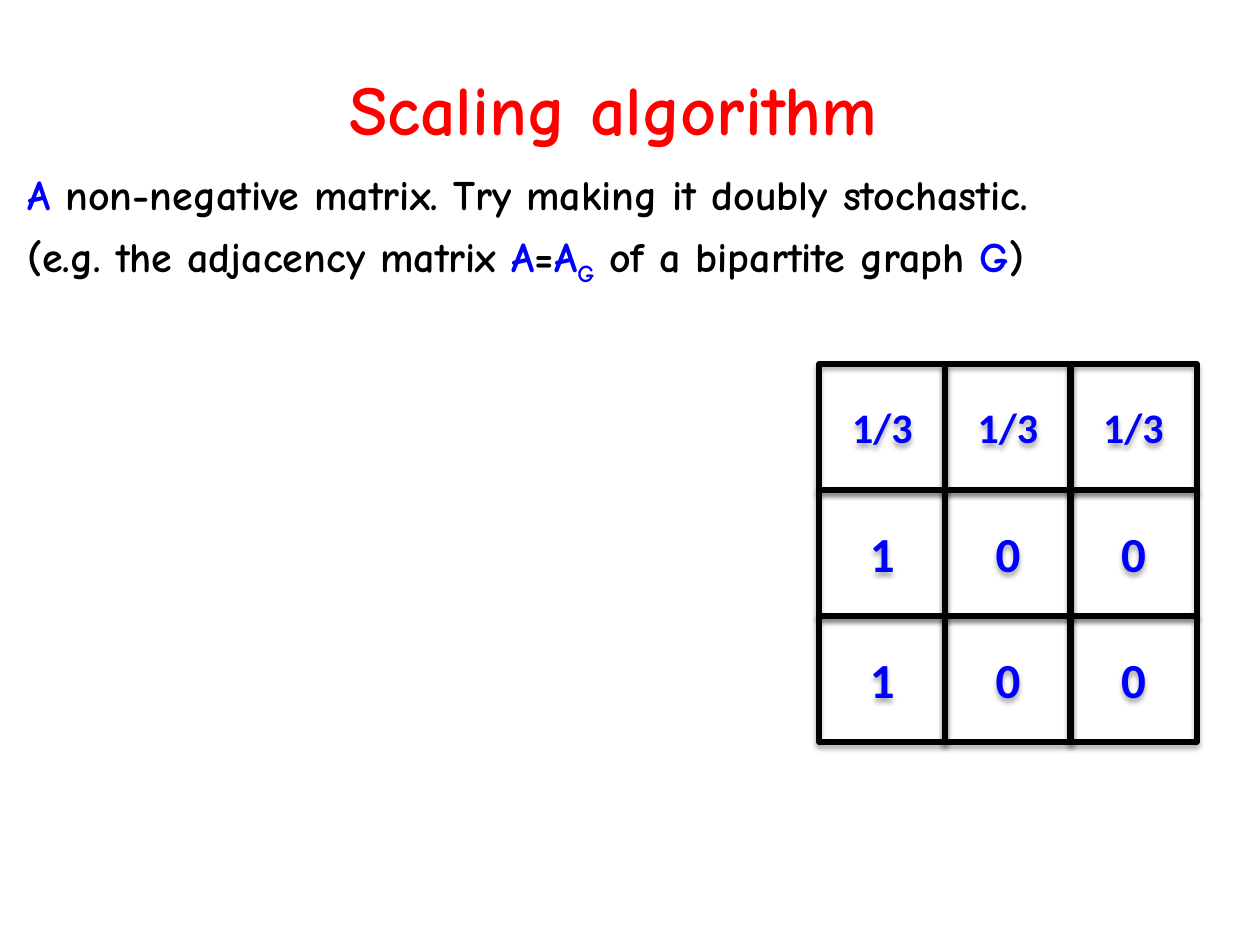
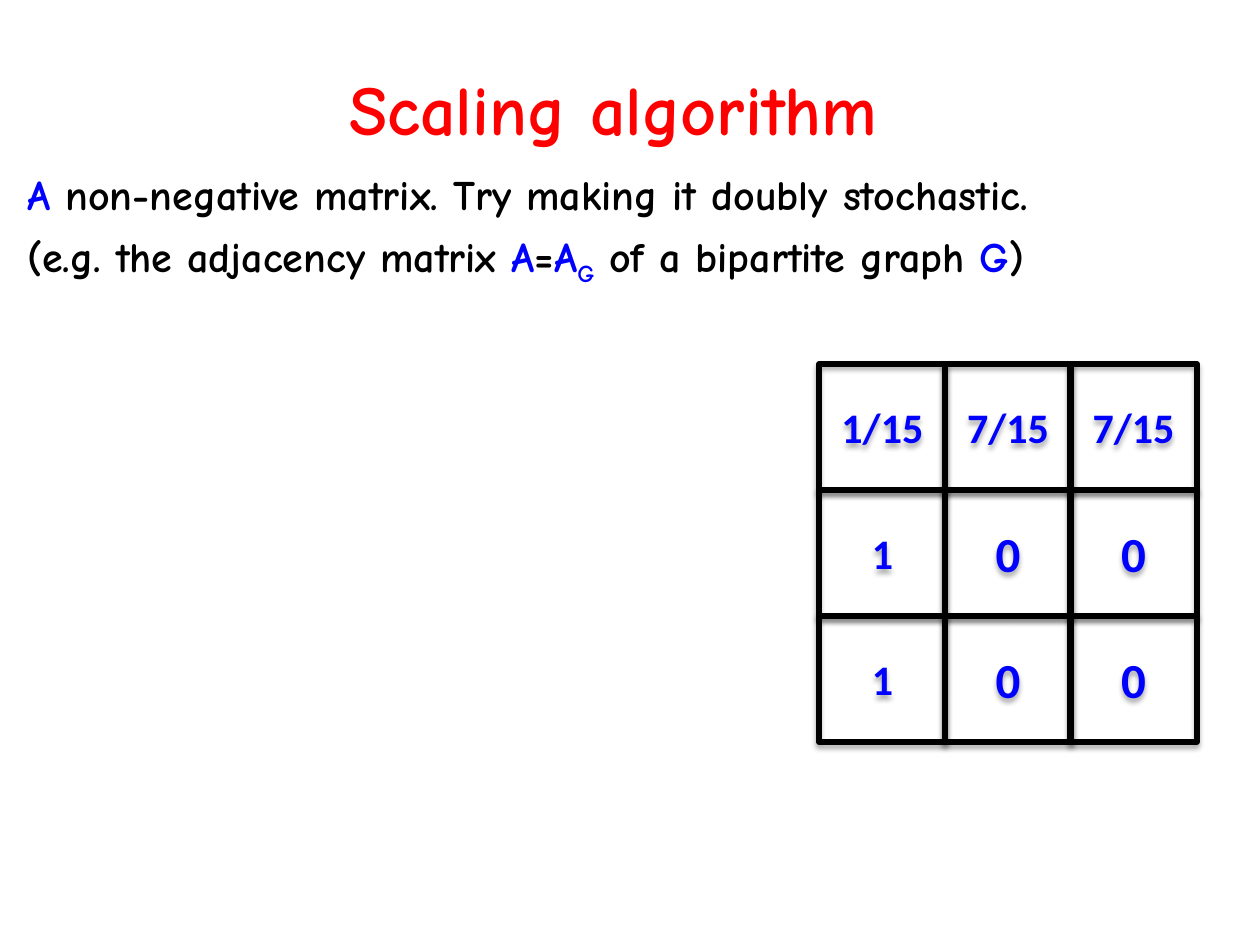
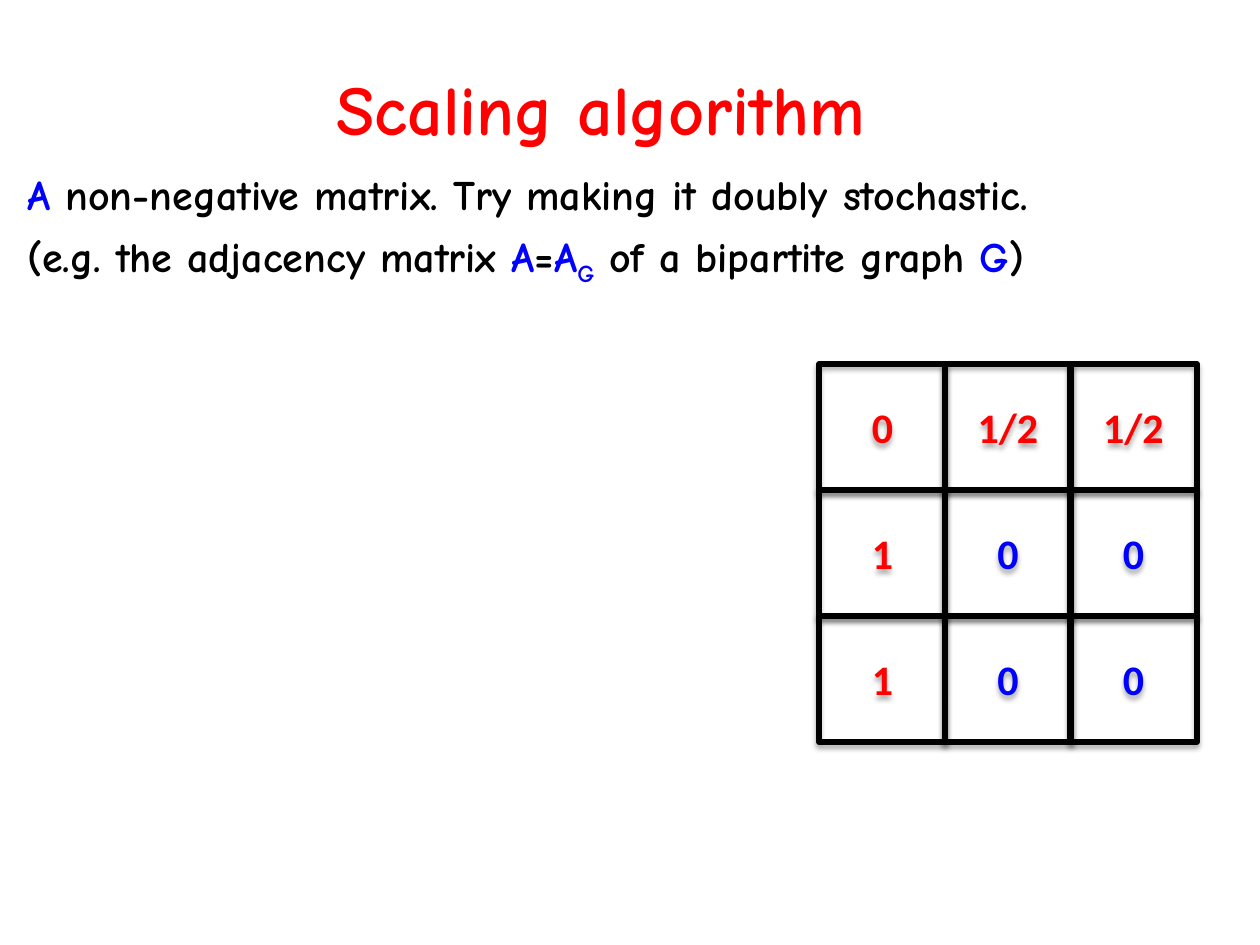
import dataclasses

import pptx
import pptx.dml.color
import pptx.enum.shapes
import pptx.enum.text
import pptx.oxml
import pptx.oxml.ns
import pptx.util

Pt = pptx.util.Pt
RGB = pptx.dml.color.RGBColor.from_string
MIDDLE = pptx.enum.text.MSO_ANCHOR.MIDDLE
CENTER = pptx.enum.text.PP_ALIGN.CENTER


@dataclasses.dataclass(frozen=True)
class Theme:
    black: str = "000000"
    blue: str = "0000FF"
    red: str = "FF0000"
    text_font: str = "Comic Neue"
    cell_font: str = "Calibri"
    title_size: float = 40
    text_size: float = 24
    cell_size: float = 24
    big_cell_size: float = 28
    border: float = 3


THEME = Theme()

# Each paragraph is a list of (text, colour, subscript) runs.
STATEMENT = [
    [
        ("A", THEME.blue, False),
        (" non-negative matrix. Try making it doubly stochastic.", THEME.black, False),
    ],
    [
        ("(e.g. the adjacency matrix ", THEME.black, False),
        ("A", THEME.blue, False),
        ("=", THEME.black, False),
        ("A", THEME.blue, False),
        ("G", THEME.blue, True),
        (" of a bipartite graph ", THEME.black, False),
        ("G", THEME.blue, False),
        (")", THEME.black, False),
    ],
]

SHADOW = (
    f'<a:outerShdw {pptx.oxml.ns.nsdecls("a")} blurRad="{Pt(3.1)}" dist="{Pt(1.8)}" '
    'dir="5400000" rotWithShape="0"><a:srgbClr val="000000">'
    '<a:alpha val="35000"/></a:srgbClr></a:outerShdw>'
)


def add_run(p, text, *, font, size, color, bold=True, subscript=False):
    r = p.add_run()
    r.text = text
    r.font.name = font
    r.font.size = Pt(size)
    r.font.bold = bold
    r.font.color.rgb = RGB(color)
    if subscript:
        r._r.get_or_add_rPr().set("baseline", "-25000")
    return r


def add_drop_shadow(sp):
    sp.shadow.inherit = False
    effects = sp._element.spPr.find(pptx.oxml.ns.qn("a:effectLst"))
    effects.append(pptx.oxml.parse_xml(SHADOW))


class Deck:
    def __init__(self, theme):
        self.theme = theme
        self.prs = pptx.Presentation()
        self.prs.slide_width, self.prs.slide_height = Pt(720), Pt(540)
        self.slide = None

    def new_slide(self):
        title_only = self.prs.slide_layouts[5]
        self.slide = self.prs.slides.add_slide(title_only)

    def title(self, text):
        sp = self.slide.shapes.title
        sp.left, sp.top, sp.width, sp.height = Pt(44.5), Pt(3.5), Pt(612), Pt(116)
        tf = sp.text_frame
        tf.vertical_anchor = MIDDLE
        p = tf.paragraphs[0]
        p.alignment = CENTER
        add_run(p, text, font=self.theme.text_font, size=self.theme.title_size,
                color=self.theme.red)

    def statement(self, paragraphs, height):
        sp = self.slide.shapes.add_textbox(Pt(8.5), Pt(87), Pt(703), Pt(height))
        tf = sp.text_frame
        tf.word_wrap = True
        tf.auto_size = pptx.enum.text.MSO_AUTO_SIZE.SHAPE_TO_FIT_TEXT
        for i, runs in enumerate(paragraphs):
            p = tf.add_paragraph() if i else tf.paragraphs[0]
            p.line_spacing = 1.2
            for text, color, subscript in runs:
                add_run(p, text, font=self.theme.text_font, size=self.theme.text_size,
                        color=color, subscript=subscript)

    def cell(self, shapes, text, left, top, size, color):
        sp = shapes.add_shape(pptx.enum.shapes.MSO_SHAPE.RECTANGLE,
                              Pt(left), Pt(top), Pt(72.5), Pt(72))
        sp.fill.background()
        sp.line.color.rgb = RGB(self.theme.black)
        sp.line.width = Pt(self.theme.border)
        add_drop_shadow(sp)
        tf = sp.text_frame
        tf.vertical_anchor = MIDDLE
        p = tf.paragraphs[0]
        p.alignment = CENTER
        add_run(p, text, font=self.theme.cell_font, size=size, color=color)

    def matrix(self, rows, big, highlight):
        """Draw the grid; entries in big are larger, highlight reddens row and column 0."""
        group = self.slide.shapes.add_group_shape()
        for i, row in reversed(list(enumerate(rows))):
            for j, text in enumerate(row):
                size = self.theme.big_cell_size if text in big else self.theme.cell_size
                red = highlight and 0 in (i, j)
                self.cell(group.shapes, text, 468 + 71.75 * j, 208 + 72 * i, size,
                          self.theme.red if red else self.theme.blue)


def main():
    deck = Deck(THEME)
    lower_rows = [["1", "0", "0"]] * 2
    # Title, statement height, top matrix row, enlarged entries, highlight
    steps = [
        ("Scaling algorithm", 76, ["1/3", "1/3", "1/3"], {"0", "1"}, False),
        ("Scaling algorithm", 76, ["1/15", "7/15", "7/15"], {"0"}, False),
        ("Scaling algorithm ", 111, ["0", "1/2", "1/2"], set(), True),
    ]
    for title, height, top_row, big, highlight in steps:
        deck.new_slide()
        deck.matrix([top_row] + lower_rows, big, highlight)
        deck.title(title)
        deck.statement(STATEMENT, height)
    deck.prs.save("out.pptx")


if __name__ == "__main__":
    main()
